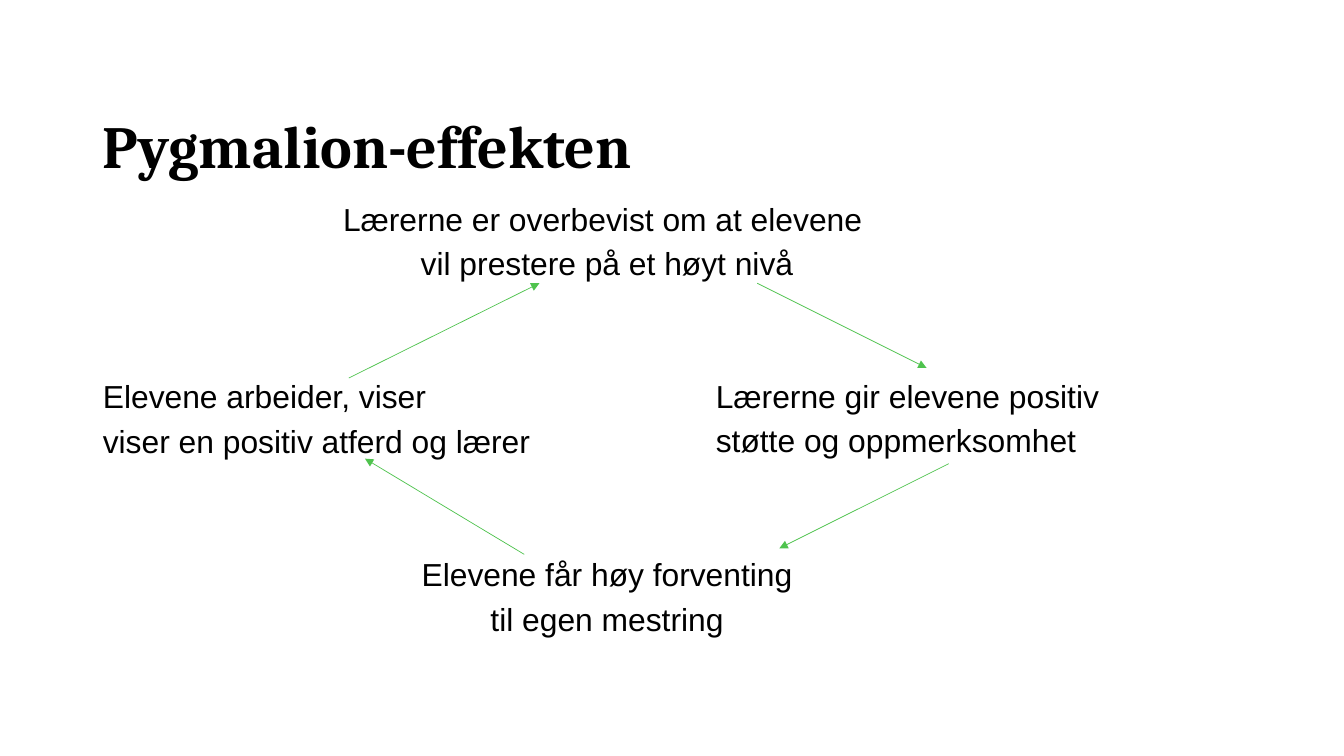
"""Build the Pygmalion effect slide."""
from dataclasses import dataclass

from lxml.etree import SubElement
from pptx import Presentation
from pptx.dml.color import RGBColor
from pptx.enum.shapes import MSO_CONNECTOR
from pptx.enum.text import MSO_ANCHOR, MSO_AUTO_SIZE, PP_ALIGN
from pptx.oxml.ns import qn
from pptx.slide import Slide
from pptx.util import Inches, Pt


@dataclass(frozen=True)
class Theme:
    """Colours, fonts and type sizes of the slide."""
    text: RGBColor = RGBColor(0, 0, 0)
    arrow: RGBColor = RGBColor(0x4F, 0xC3, 0x4E)
    background: RGBColor = RGBColor(255, 255, 255)
    title_font: str = "Cambria"
    body_font: str = "Arial"
    title_size: float = 42.7
    body_size: float = 22.7
    line_gap: float = 10
    group_gap: float = 73.5


@dataclass(frozen=True)
class Box:
    """Position and size in inches."""
    left: float
    top: float
    width: float
    height: float


@dataclass(frozen=True)
class Stage:
    """One stage of the cycle, line by line."""
    lines: tuple[str, ...]
    align: PP_ALIGN


@dataclass(frozen=True)
class Body:
    """A body placeholder with its stages from top to bottom."""
    idx: int
    box: Box
    stages: tuple[Stage, ...]


@dataclass(frozen=True)
class Arrow:
    """An arrow between two points in inches."""
    start: tuple[float, float]
    end: tuple[float, float]


THEME = Theme()
TITLE_BOX = Box(0.92, 0.4, 10.2, 1.45)
BODIES = (
    Body(1, Box(0.92, 2, 10.2, 4.76), (
        Stage(("Lærerne er overbevist om at elevene ",
               "vil prestere på et høyt nivå"), PP_ALIGN.CENTER),
        Stage(("Elevene arbeider, viser",
               "viser en positiv atferd og lærer"), PP_ALIGN.LEFT),
        Stage(("Elevene får høy forventing", "til egen mestring"), PP_ALIGN.CENTER),
    )),
    Body(2, Box(7, 3.76, 4.12, 1), (
        Stage(("Lærerne gir elevene positiv", "støtte og oppmerksomhet"), PP_ALIGN.LEFT),
    )),
)
ARROWS = (
    Arrow((7.51, 2.81), (9.19, 3.65)),
    Arrow((9.41, 4.6), (7.73, 5.44)),
    Arrow((5.2, 5.5), (3.62, 4.55)),
    Arrow((3.46, 3.75), (5.35, 2.81)),
)


def set_attrs(target: object, values: dict[str, object]) -> None:
    """Set each named attribute on the target."""
    for name, value in values.items():
        setattr(target, name, value)


def place(sp: object, box: Box, anchor: MSO_ANCHOR) -> None:
    """Move a placeholder and format its text frame."""
    set_attrs(sp, {"left": Inches(box.left), "top": Inches(box.top),
                   "width": Inches(box.width), "height": Inches(box.height)})
    set_attrs(sp.text_frame, {"word_wrap": True, "auto_size": MSO_AUTO_SIZE.NONE,
                              "vertical_anchor": anchor})


def add_text(p: object, text: str, font: str, size: float, bold: bool) -> None:
    """Add one formatted run to a paragraph."""
    r = p.add_run()
    r.text = text
    set_attrs(r.font, {"name": font, "size": Pt(size), "bold": bold})
    r.font.color.rgb = THEME.text


def add_title(slide: Slide) -> None:
    """Fill the title placeholder."""
    sp = slide.shapes.title
    place(sp, TITLE_BOX, MSO_ANCHOR.BOTTOM)
    p = sp.text_frame.paragraphs[0]
    set_attrs(p, {"alignment": PP_ALIGN.LEFT, "line_spacing": 0.9})
    add_text(p, "Pygmalion-effekten", THEME.title_font, THEME.title_size, True)


def add_body(slide: Slide, body: Body) -> None:
    """Fill one body placeholder with its stages."""
    sp = slide.placeholders[body.idx]
    place(sp, body.box, MSO_ANCHOR.TOP)
    tf = sp.text_frame
    for n, stage in enumerate(body.stages):
        for i, line in enumerate(stage.lines):
            first = n == i == 0
            p = tf.paragraphs[0] if first else tf.add_paragraph()
            gap = 0 if first else THEME.line_gap if i else THEME.group_gap
            set_attrs(p, {"alignment": stage.align, "line_spacing": 0.8,
                          "space_before": Pt(gap), "space_after": Pt(0)})
            props = p._p.get_or_add_pPr()
            props.set("marL", "0")
            props.set("indent", "0")
            SubElement(props, qn("a:buNone"))
            add_text(p, line, THEME.body_font, THEME.body_size, False)


def add_arrow(slide: Slide, arrow: Arrow) -> None:
    """Draw one arrow of the cycle."""
    points = [Inches(v) for v in (*arrow.start, *arrow.end)]
    cxn = slide.shapes.add_connector(MSO_CONNECTOR.STRAIGHT, *points)
    cxn.line.color.rgb = THEME.arrow
    cxn.line.width = Pt(0.5)
    SubElement(cxn.line._get_or_add_ln(), qn("a:tailEnd"), type="triangle")
    SubElement(cxn._element.spPr, qn("a:effectLst"))


def main() -> None:
    """Build and save the presentation."""
    prs = Presentation()
    set_attrs(prs, {"slide_width": Inches(13.33), "slide_height": Inches(7.5)})
    slide = prs.slides.add_slide(prs.slide_layouts.get_by_name("Two Content"))
    slide.background.fill.solid()
    slide.background.fill.fore_color.rgb = THEME.background
    add_title(slide)
    for body in BODIES:
        add_body(slide, body)
    for arrow in ARROWS:
        add_arrow(slide, arrow)
    prs.save("out.pptx")


if __name__ == "__main__":
    main()
